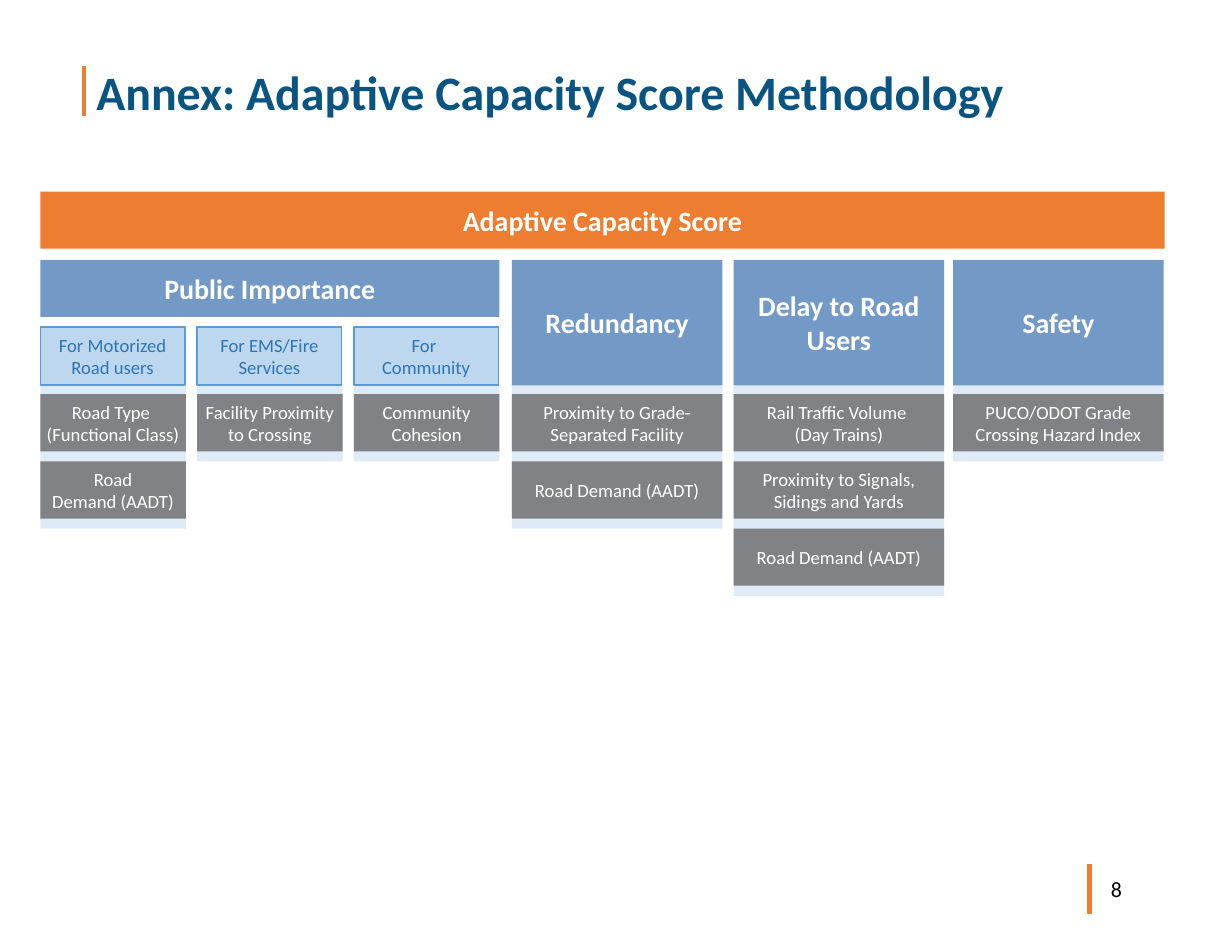
from pptx import Presentation
from pptx.dml.color import RGBColor
from pptx.enum.shapes import MSO_CONNECTOR, MSO_SHAPE
from pptx.enum.text import MSO_ANCHOR, PP_ALIGN
from pptx.oxml.ns import qn
from pptx.util import Inches, Pt
from lxml import etree

RECTANGLE = MSO_SHAPE.RECTANGLE
STRAIGHT = MSO_CONNECTOR.STRAIGHT
TOP, MIDDLE = MSO_ANCHOR.TOP, MSO_ANCHOR.MIDDLE
LEFT, CENTER = PP_ALIGN.LEFT, PP_ALIGN.CENTER

ORANGE = RGBColor(0xED, 0x7D, 0x31)
NAVY = RGBColor(0x0A, 0x54, 0x81)
BLUE = RGBColor(0x73, 0x99, 0xC6)
LIGHT_BLUE = RGBColor(0xBD, 0xD7, 0xEE)
OUTLINE_BLUE = RGBColor(0x5B, 0x9B, 0xD5)
TEXT_BLUE = RGBColor(0x2E, 0x75, 0xB6)
PALE_BLUE = RGBColor(0xDE, 0xEB, 0xF7)
GRAY = RGBColor(0x80, 0x82, 0x85)
WHITE = RGBColor(0xFF, 0xFF, 0xFF)
BLACK = RGBColor(0, 0, 0)

FONT = "Calibri"
CHART_LEFT, CHART_WIDTH = 0.36, 10.04
BANNER_TOP, BANNER_HEIGHT = 1.71, 0.51
HEADER_TOP, HEADER_BOTTOM = 2.32, 3.44
SUBHEADER_TOP, PANEL_TOP = 2.92, 2.84
FACTOR_TOP, FACTOR_HEIGHT, FACTOR_PITCH = 3.52, 0.51, 0.6

IMPORTANCE_GROUPS = [
    (0.36, "For Motorized Road users",
     ["Road Type \v(Functional Class)", "Road\nDemand (AADT)"]),
    (1.76, "For EMS/Fire Services", ["Facility Proximity\vto Crossing"]),
    (3.16, "For \nCommunity", ["Community\vCohesion"]),
]
CRITERIA = [
    (4.57, "Redundancy",
     ["Proximity to Grade-Separated Facility", "Road Demand (AADT)"]),
    (6.55, "Delay to Road Users",
     ["Rail Traffic Volume \v(Day Trains)",
      "Proximity to Signals, Sidings and Yards", "Road Demand (AADT)"]),
    (8.51, "Safety", ["PUCO/ODOT Grade Crossing Hazard Index"]),
]


def write_text(text_frame, text, size, color, bold=False, align=CENTER, anchor=MIDDLE):
    text_frame.text = text
    text_frame.word_wrap = True
    text_frame.vertical_anchor = anchor
    for paragraph in text_frame.paragraphs:
        paragraph.alignment = align
        for run in paragraph.runs:
            run.font.name = FONT
            run.font.size = Pt(size)
            run.font.bold = bold
            run.font.color.rgb = color


def add_box(slide, left, top, width, height, fill, text="", size=12,
            color=WHITE, bold=False, outline=None):
    shape = slide.shapes.add_shape(
        RECTANGLE, Inches(left), Inches(top), Inches(width), Inches(height))
    shape.shadow.inherit = False
    shape.fill.solid()
    shape.fill.fore_color.rgb = fill
    if outline is None:
        shape.line.fill.background()
    else:
        shape.line.color.rgb = outline
        shape.line.width = Pt(1)
    if text:
        write_text(shape.text_frame, text, size, color, bold)
    return shape


def add_accent(slide, left, top, height):
    accent = slide.shapes.add_connector(
        STRAIGHT, Inches(left), Inches(top), Inches(left), Inches(top + height))
    accent.line.color.rgb = ORANGE
    accent.line.width = Pt(3)
    etree.SubElement(accent._element.spPr, qn("a:effectLst"))


def add_title(slide, left, top, width, height):
    add_accent(slide, left - 0.01, top + 0.02, 0.45)
    title = slide.shapes.title
    title.left, title.top = Inches(left), Inches(top)
    title.width, title.height = Inches(width), Inches(height)
    write_text(title.text_frame, "Annex: Adaptive Capacity Score Methodology",
               30.8, NAVY, True, LEFT, TOP)
    title.text_frame.paragraphs[0].line_spacing = 0.9


def add_page_number(slide, left, top, width, height):
    add_accent(slide, left - 0.09, top, height)
    box = slide.shapes.add_textbox(
        Inches(left), Inches(top), Inches(width), Inches(height))
    write_text(box.text_frame, "8", 14, BLACK, align=LEFT)


def add_factors(slide, left, width, panel_top, factors, narrow=False):
    panel_bottom = FACTOR_TOP + FACTOR_PITCH * len(factors)
    add_box(slide, left, panel_top, width, panel_bottom - panel_top, PALE_BLUE)
    for row, factor in enumerate(factors):
        shape = add_box(slide, left, FACTOR_TOP + row * FACTOR_PITCH,
                        width, FACTOR_HEIGHT, GRAY, factor)
        if narrow:
            text_frame = shape.text_frame
            text_frame.word_wrap = False
            text_frame.margin_left = text_frame.margin_right = Inches(0.05)


def add_criterion(slide, left, width, name, factors):
    add_factors(slide, left, width, PANEL_TOP, factors)
    add_box(slide, left, HEADER_TOP, width, HEADER_BOTTOM - HEADER_TOP,
            BLUE, name, 18, bold=True)


def add_public_importance(slide, left, width):
    add_box(slide, left, HEADER_TOP, width, BANNER_HEIGHT,
            BLUE, "Public Importance", 18, bold=True)
    for group_left, name, factors in IMPORTANCE_GROUPS:
        add_factors(slide, group_left, 1.3, HEADER_BOTTOM, factors, True)
        add_box(slide, group_left, SUBHEADER_TOP, 1.29,
                HEADER_BOTTOM - SUBHEADER_TOP, LIGHT_BLUE, name,
                color=TEXT_BLUE, outline=OUTLINE_BLUE)


def main():
    presentation = Presentation()
    presentation.slide_width = Inches(11)
    presentation.slide_height = Inches(8.5)
    slide = presentation.slides.add_slide(presentation.slide_layouts[5])
    add_title(slide, 0.76, 0.57, 9.49, 1.04)
    add_page_number(slide, 9.82, 7.71, 0.7, 0.45)
    add_box(slide, CHART_LEFT, BANNER_TOP, CHART_WIDTH, BANNER_HEIGHT,
            ORANGE, "Adaptive Capacity Score", 18, bold=True)
    add_public_importance(slide, CHART_LEFT, 4.1)
    for left, name, factors in CRITERIA:
        add_criterion(slide, left, 1.88, name, factors)
    presentation.save("out.pptx")


if __name__ == "__main__":
    main()
